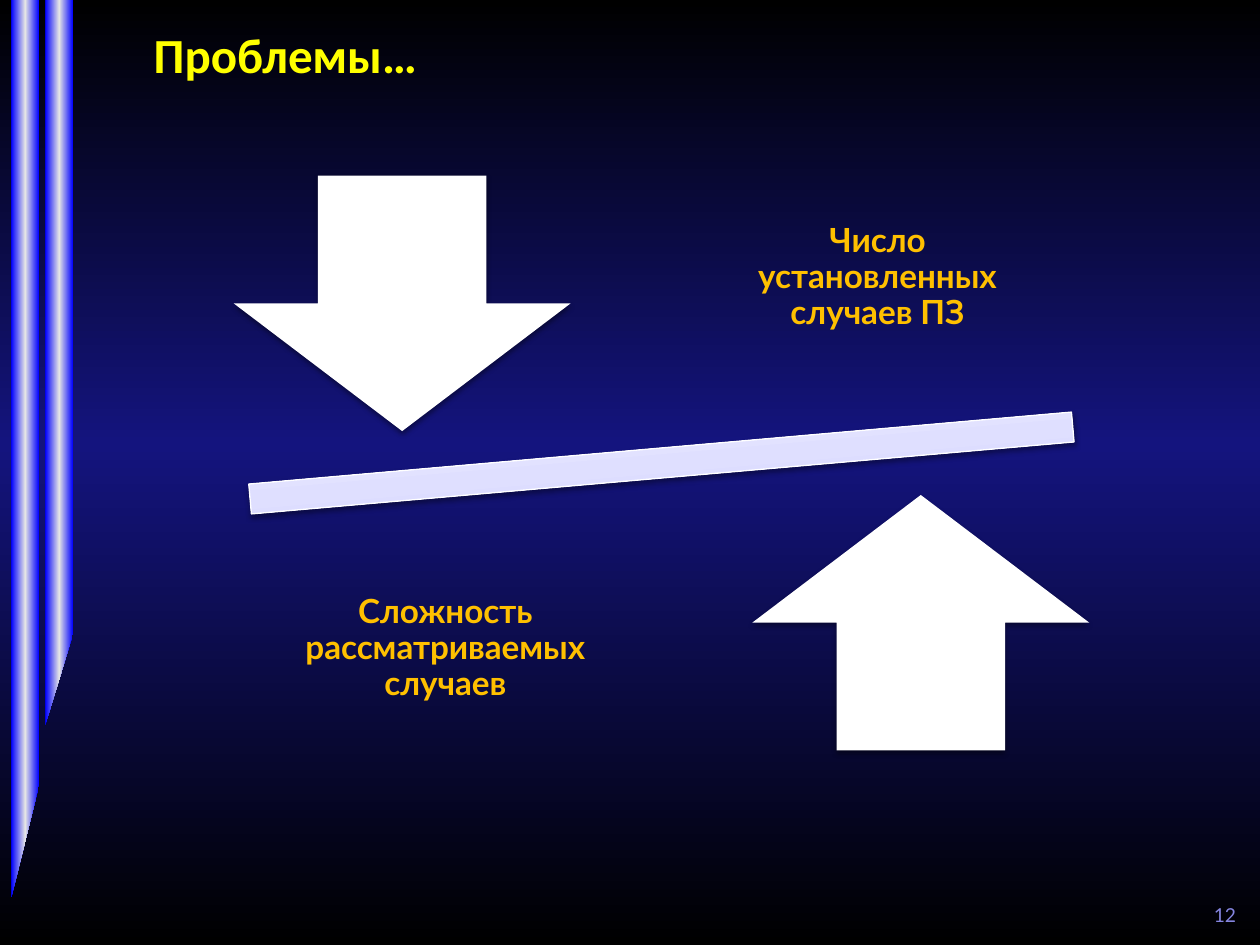
from copy import deepcopy

from lxml.etree import SubElement
from pptx import Presentation
from pptx.dml.color import RGBColor
from pptx.enum.shapes import MSO_SHAPE
from pptx.enum.text import MSO_ANCHOR, PP_ALIGN
from pptx.oxml.ns import qn
from pptx.util import Inches, Pt

WIDE, HIGH = 10, 7.5
STRIPE = [(0, "0000FF"), (0.5, "E5E5E5"), (1, "0000FF")]
NIGHT = [(0, "000000"), (0.53, "14147E"), (1, "000000")]
BEAM = [(0, "CECEFF"), (0.35, "DBDBFF"), (1, "F1F1FF")]


def rgb(code):
    return RGBColor.from_string(code)


def blend(fill, node, stops, angle):
    """Fill with a linear gradient of three stops; the angle runs counter-clockwise."""
    fill.gradient()
    fill.gradient_angle = angle
    rail = node.find(".//" + qn("a:gsLst"))
    rail.append(deepcopy(rail[0]))
    for stop, (spot, code) in zip(fill.gradient_stops, stops):
        stop.position = spot
        stop.color.rgb = rgb(code)


def shade(shape):
    """Give the shape a soft shadow straight below it."""
    shape.shadow.inherit = False
    glow = SubElement(shape.element.spPr.find(qn("a:effectLst")), qn("a:outerShdw"),
                      blurRad=str(Pt(3.1)), dist=str(Pt(1.6)), dir="5400000",
                      rotWithShape="0")
    tint = SubElement(glow, qn("a:srgbClr"), val="000000")
    SubElement(tint, qn("a:alpha"), val="38000")


def write(slide, box, text, size, color, font="Lato", bold=False,
          align=PP_ALIGN.LEFT, anchor=MSO_ANCHOR.MIDDLE, pad=(0, 0), lead=None):
    frame = slide.shapes.add_textbox(*map(Inches, box)).text_frame
    frame.word_wrap = True
    frame.vertical_anchor = anchor
    frame.margin_left = frame.margin_right = Inches(pad[0])
    frame.margin_top = frame.margin_bottom = Inches(pad[1])
    para = frame.paragraphs[0]
    para.text = text
    para.alignment = align
    para.line_spacing = lead
    para.font.size, para.font.bold, para.font.name = Pt(size), bold, font
    para.font.color.rgb = rgb(color)


def ribbon(slide, box, cut):
    """Draw a hanging stripe whose right edge stops short by the cut."""
    x, y, w, h = map(Inches, box)
    pen = slide.shapes.build_freeform(x, y)
    pen.add_line_segments([(x + w, y), (x + w, y + h - Inches(cut)), (x, y + h)], close=True)
    shape = pen.convert_to_shape()
    shape.shadow.inherit = False
    shape.line.fill.background()
    blend(shape.fill, shape.element, STRIPE, 0)


def seesaw(slide, box, high, low):
    """Place a tilted beam with arrows and labels mirrored through its centre."""
    x, y, w, h = box

    def area(dx, dy, sw, sh):
        return (x + w * (0.5 + dx - sw / 2), y + h * (0.5 + dy - sh / 2), w * sw, h * sh)

    def add(kind, place):
        shape = slide.shapes.add_shape(kind, *map(Inches, place))
        shade(shape)
        return shape

    beam = add(MSO_SHAPE.MATH_MINUS, area(0, 0, 1.3, 0.2))
    beam.rotation = 355
    blend(beam.fill, beam.element, BEAM, 90)
    beam.line.color.rgb = rgb("FFFFFF")
    beam.line.width = Pt(0.75)

    for side, kind, text in ((-1, MSO_SHAPE.DOWN_ARROW, high), (1, MSO_SHAPE.UP_ARROW, low)):
        arrow = add(kind, area(side * 0.3, side * 0.25, 0.39, 0.4))
        arrow.fill.solid()
        arrow.fill.fore_color.rgb = rgb("FFFFFF")
        arrow.line.fill.background()
        write(slide, area(-side * 0.25, side * 0.29, 0.42, 0.42), text, 19, "FFC000",
              bold=True, align=PP_ALIGN.CENTER, pad=(0.15, 0.15), lead=0.9)


def main():
    deck = Presentation()
    deck.slide_width, deck.slide_height = Inches(WIDE), Inches(HIGH)
    slide = deck.slides.add_slide(deck.slide_layouts[6])
    blend(slide.background.fill, slide.element, NIGHT, 90)
    ribbon(slide, (0.36, 0, 0.22, 5.75), 0.72)
    ribbon(slide, (0.09, 0, 0.22, 7.12), 0.89)
    write(slide, (1.22, 0.16, 7.56, 0.53), "Проблемы…", 28, "FFFF00", "Calibri", True)
    seesaw(slide, (1.82, 1.14, 6.86, 5.07),
           "Число установленных случаев ПЗ", "Сложность рассматриваемых случаев")
    write(slide, (6.91, 7, 3, 0.4), "12", 11, "8585E0", align=PP_ALIGN.RIGHT,
          anchor=MSO_ANCHOR.BOTTOM, pad=(0.1, 0.05))
    deck.save("out.pptx")


if __name__ == "__main__":
    main()
